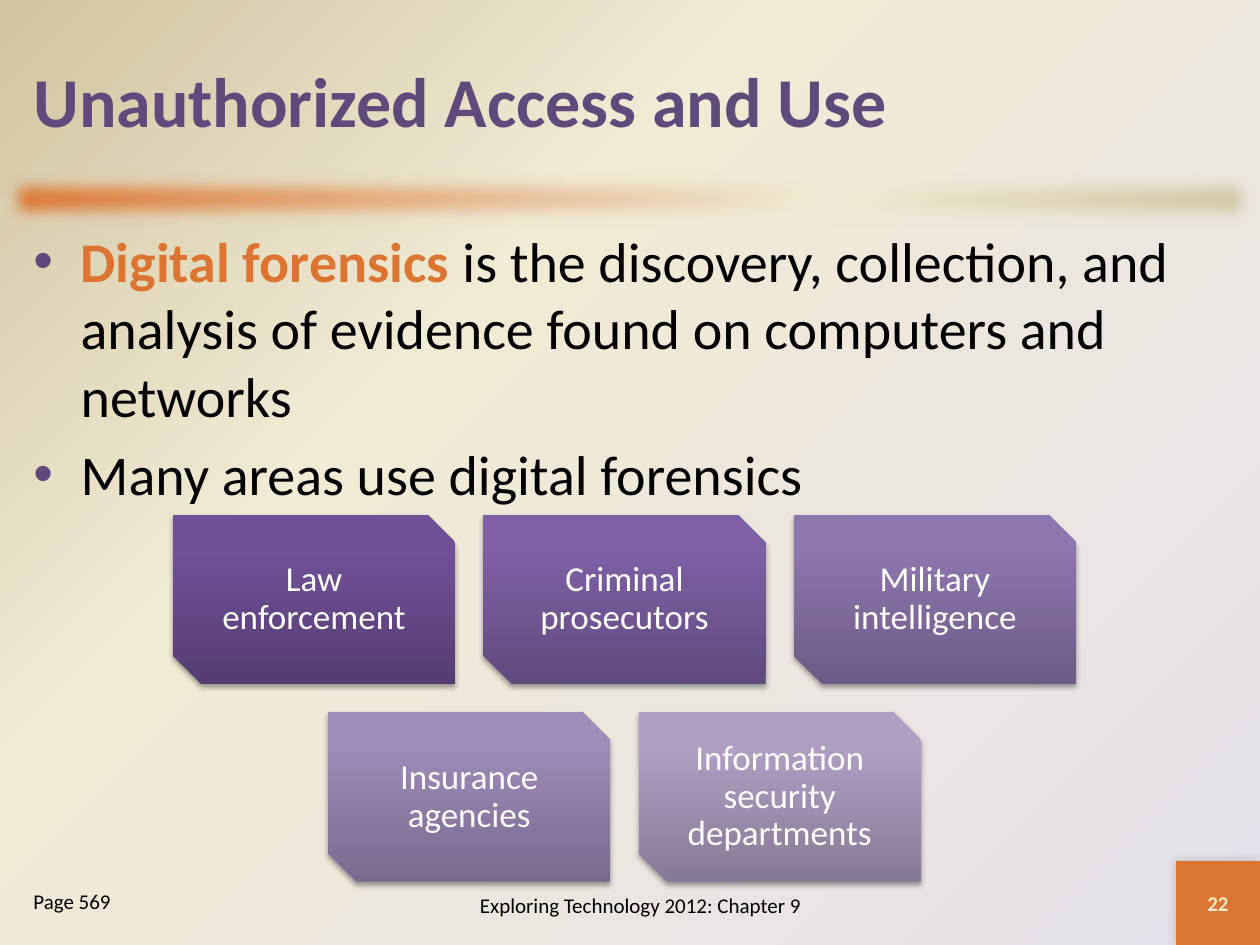
"""Builds the slide on digital forensics and the areas that use it."""
from dataclasses import dataclass

from pptx import Presentation
from pptx.dml.color import RGBColor
from pptx.enum.shapes import MSO_SHAPE as SHAPE
from pptx.enum.text import MSO_ANCHOR as ANCHOR, PP_ALIGN as ALIGN
from pptx.oxml import parse_xml
from pptx.oxml.ns import nsdecls, qn
from pptx.util import Pt

FONT = "Calibri"
PURPLE, ORANGE, BLACK, WHITE = "604A7B", "DB7531", "000000", "FFFFFF"
CREAM, SAND, LILAC = "F0EBD5", "D1C39F", "E6E0EC"
CARD_W, CARD_H, GAP = 161.3, 96.8, 16.1
CARDS_MID, CARDS_TOP = 356.9, 294
HANG = 27


@dataclass(frozen=True)
class Card:
    text: str
    stops: tuple[str, str, str]


ROWS = [
    [Card("Law enforcement", ("563D74", "705097", "704F99")),
     Card("Criminal prosecutors", ("614A7F", "7E60A5", "7F60A7")),
     Card("Military intelligence", ("6D5B86", "8E76AE", "8E75B0"))],
    [Card("Insurance agencies", ("796B8E", "9E8BB8", "9E8BBA")),
     Card("Information security departments", ("867B96", "AE9FC3", "AE9FC4"))],
]


def rgb(color: str) -> RGBColor:
    return RGBColor.from_string(color)


def linear(angle: int) -> str:
    return f'<a:lin ang="{angle * 60000}" scaled="0"/>'


def set_gradient(fill, root, colors: tuple, middle: int, shade: str) -> None:
    fill.gradient()
    old = next(root.iter(qn("a:gradFill")))
    stops = "".join(f'<a:gs pos="{pos * 1000}"><a:srgbClr val="{c}"/></a:gs>'
                    for pos, c in zip((0, middle, 100), colors))
    new = parse_xml(f'<a:gradFill {nsdecls("a")} rotWithShape="1">'
                    f'<a:gsLst>{stops}</a:gsLst>{shade}</a:gradFill>')
    old.getparent().replace(old, new)


def add_effect(sp, xml: str) -> None:
    sp.shadow.inherit = False
    sp._element.spPr.find(qn("a:effectLst")).append(parse_xml(xml))


def add_shadow(sp, alpha: int, blur: float, dist: float, angle: int) -> None:
    add_effect(sp, f'<a:outerShdw {nsdecls("a")} blurRad="{Pt(blur)}" dist="{Pt(dist)}" '
                   f'dir="{angle * 60000}" algn="ctr" rotWithShape="0">'
                   f'<a:srgbClr val="{BLACK}"><a:alpha val="{alpha * 1000}"/>'
                   '</a:srgbClr></a:outerShdw>')


def add_box(s, kind, x: float, y: float, w: float, h: float):
    sp = s.shapes.add_shape(kind, Pt(x), Pt(y), Pt(w), Pt(h))
    sp.line.fill.background()
    return sp


def add_textbox(s, x: float, y: float, w: float, h: float):
    return s.shapes.add_textbox(Pt(x), Pt(y), Pt(w), Pt(h)).text_frame


def add_run(p, text: str, size: float, color: str = BLACK, bold: bool = False) -> None:
    r = p.add_run()
    r.text = text
    r.font.name, r.font.size, r.font.bold = FONT, Pt(size), bold
    r.font.color.rgb = rgb(color)


def write(tf, text: str, *, size: float, color: str = BLACK, bold: bool = False,
          align=ALIGN.LEFT, anchor=ANCHOR.MIDDLE, spacing: float = 1):
    tf.word_wrap, tf.vertical_anchor = True, anchor
    p = tf.paragraphs[0]
    p.alignment, p.line_spacing = align, spacing
    add_run(p, text, size, color, bold)
    return p


def set_bullet(p) -> None:
    p.space_before = Pt(6.4)
    pPr = p._p.get_or_add_pPr()
    pPr.set("marL", str(Pt(HANG)))
    pPr.set("indent", str(-Pt(HANG)))
    for xml in (f'<a:buClr {nsdecls("a")}><a:srgbClr val="{PURPLE}"/></a:buClr>',
                f'<a:buFont {nsdecls("a")} typeface="Arial"/>',
                f'<a:buChar {nsdecls("a")} char="•"/>'):
        pPr.append(parse_xml(xml))


def add_card(s, card: Card, x: float, y: float) -> None:
    sp = add_box(s, SHAPE.SNIP_2_DIAG_RECTANGLE, x, y, CARD_W, CARD_H)
    set_gradient(sp.fill, sp._element, card.stops, 80, linear(270))
    add_shadow(sp, 35, 3.1, 1.8, 90)
    tf = sp.text_frame
    tf.margin_left = tf.margin_right = tf.margin_top = tf.margin_bottom = Pt(6)
    write(tf, card.text, size=20, color=WHITE, align=ALIGN.CENTER, spacing=0.9)


def add_frame(s) -> None:
    set_gradient(s.background.fill, s._element, (LILAC, CREAM, SAND), 65,
                 '<a:path path="circle"><a:fillToRect l="100000" t="100000"/></a:path>')
    bar = add_box(s, SHAPE.RECTANGLE, 0, 96, 720, 36)
    set_gradient(bar.fill, bar._element, (ORANGE, CREAM, SAND), 65, linear(45))
    add_effect(bar, f'<a:softEdge {nsdecls("a")} rad="{Pt(10)}"/>')
    number = add_box(s, SHAPE.RECTANGLE, 672, 492, 48, 48)
    number.fill.solid()
    number.fill.fore_color.rgb = rgb(ORANGE)
    add_shadow(number, 20, 6, 0, 225)
    write(number.text_frame, "22", size=12, color="EEEBCA", bold=True, align=ALIGN.CENTER)
    write(add_textbox(s, 216, 497.5, 300, 39.6), "Exploring Technology 2012: Chapter 9",
          size=12, align=ALIGN.CENTER)
    page = write(add_textbox(s, 12, 504, 132, 36), "Page 569", size=12, anchor=ANCHOR.TOP)
    page.space_before = Pt(2.4)


def add_body(s) -> None:
    write(add_textbox(s, 12, 12, 696, 90), "Unauthorized Access and Use",
          size=40, color=PURPLE, bold=True)
    tf = add_textbox(s, 12, 126, 696, 366)
    p = write(tf, "Digital forensics ", size=32, color=ORANGE, bold=True, anchor=ANCHOR.TOP)
    add_run(p, "is the discovery, collection, and analysis of evidence "
               "found on computers and networks", 32)
    set_bullet(p)
    p = tf.add_paragraph()
    add_run(p, "Many areas use digital forensics", 32)
    set_bullet(p)


def add_cards(s) -> None:
    for i, row in enumerate(ROWS):
        left = CARDS_MID - (len(row) * (CARD_W + GAP) - GAP) / 2
        for j, card in enumerate(row):
            add_card(s, card, left + j * (CARD_W + GAP), CARDS_TOP + i * (CARD_H + GAP))


def main() -> None:
    prs = Presentation()
    prs.slide_width, prs.slide_height = Pt(720), Pt(540)
    s = prs.slides.add_slide(prs.slide_layouts[6])
    add_frame(s)
    add_body(s)
    add_cards(s)
    prs.save("out.pptx")


if __name__ == "__main__":
    main()
